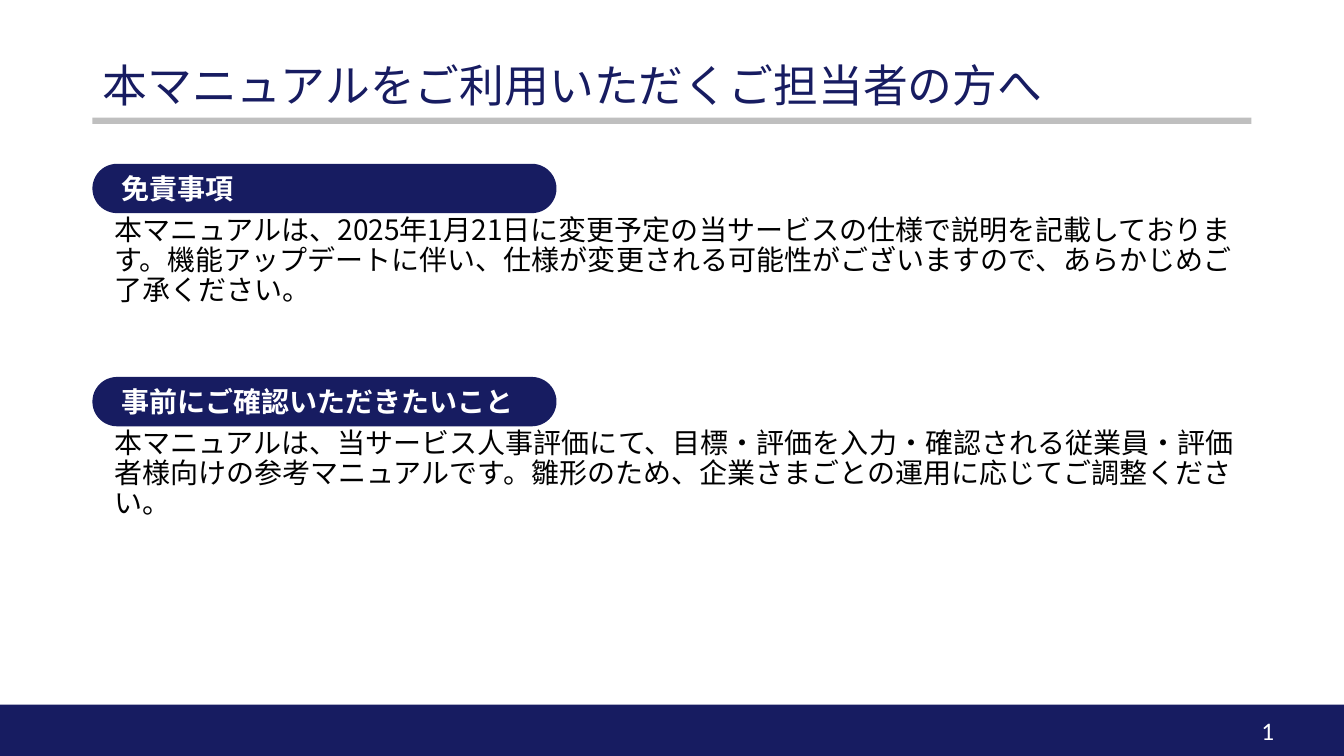
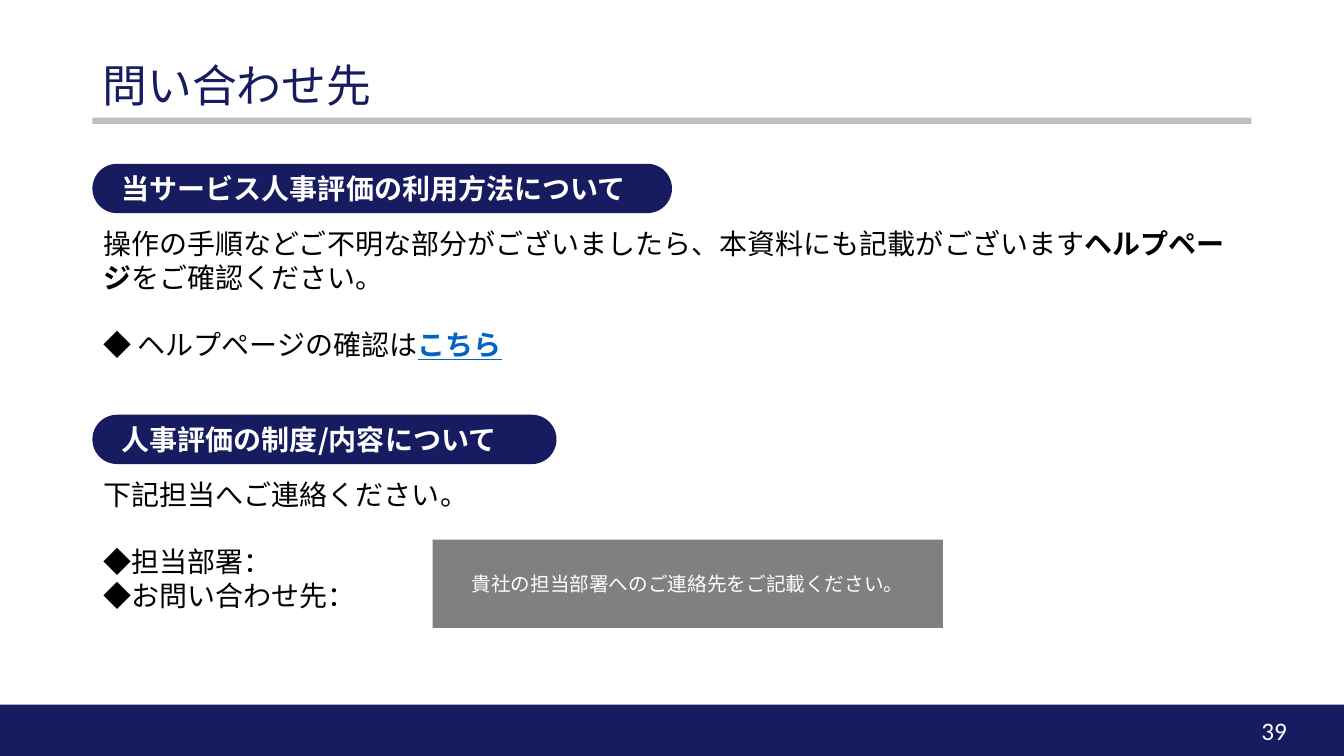
from lxml import etree
from pptx import Presentation
from pptx.dml.color import RGBColor
from pptx.enum.shapes import MSO_SHAPE
from pptx.enum.text import MSO_ANCHOR, MSO_AUTO_SIZE, PP_ALIGN
from pptx.oxml.ns import qn
from pptx.util import Emu, Pt

RECT, PILL = MSO_SHAPE.RECTANGLE, MSO_SHAPE.ROUNDED_RECTANGLE
LEFT, CENTER = PP_ALIGN.LEFT, PP_ALIGN.CENTER
MIDDLE, TOP = MSO_ANCHOR.MIDDLE, MSO_ANCHOR.TOP
NO_FIT = MSO_AUTO_SIZE.NONE

COLORS = {
    "navy": "171C61",
    "rule": "BFBFBF",
    "note": "808080",
    "link": "0563C1",
    "text": "000000",
    "white": "FFFFFF",
}
JP_FONT, NUMBER_FONT = "Noto Sans CJK JP", "Calibri"

# Each paragraph is (gap before in points, [(text, style), ...]).
SLIDES = [
    {
        "title": "本マニュアルをご利用いただくご担当者の方へ",
        "number": "1",
        "body_offset": 45, "body_height": 127, "indent": 11, "line_spacing": 0.9,
        "sections": [
            {"heading": "免責事項", "top": 156, "pill_width": 442, "paragraphs": [
                (0, [("本マニュアルは、2025年1月21日に変更予定の当サービスの仕様で説明を"
                      "記載しております。機能アップデートに伴い、仕様が変更される可能性が"
                      "ございますので、あらかじめご了承ください。", "plain")]),
            ]},
            {"heading": "事前にご確認いただきたいこと", "top": 359, "pill_width": 442, "paragraphs": [
                (0, [("本マニュアルは、当サービス人事評価にて、目標・評価を入力・確認される"
                      "従業員・評価者様向けの参考マニュアルです。雛形のため、企業さまごとの"
                      "運用に応じてご調整ください。", "plain")]),
            ]},
        ],
    },
    {
        "title": "問い合わせ先",
        "number": "39",
        "body_offset": 55, "body_height": 171, "indent": 1, "line_spacing": 1.0,
        "sections": [
            {"heading": "当サービス人事評価の利用方法について", "top": 156, "pill_width": 552, "paragraphs": [
                (0, [("操作の手順などご不明な部分がございましたら、本資料にも記載がございます", "plain"),
                     ("ヘルプページ", "bold"), ("をご確認ください。", "plain")]),
                (24, [("◆ ヘルプページの確認は", "plain"), ("こちら", "link")]),
            ]},
            {"heading": "人事評価の制度/内容について", "top": 395, "pill_width": 442, "paragraphs": [
                (0, [("下記担当へご連絡ください。", "plain")]),
                (24, [("◆担当部署：", "plain")]),
                (0, [("◆お問い合わせ先：", "plain")]),
            ]},
        ],
        "note": "貴社の担当部署へのご連絡先をご記載ください。",
    },
]

SLIDE_W, SLIDE_H = 1280, 720
MARGIN, CONTENT_W = 88, 1104
TITLE_BOX = (MARGIN, 55, CONTENT_W, 58)
RULE_BOX = (MARGIN, 112, CONTENT_W, 6)
FOOTER_BOX = (0, 671, SLIDE_W, SLIDE_H - 671)
NUMBER_BOX = (1192, 677, 68, 38)
NOTE_BOX = (412, 514, 486, 84)
PILL_H, PILL_INSET = 47, 21


def px(value):
    return Emu(value * 9525)


def rgb(name):
    return RGBColor.from_string(COLORS[name])


def place(shape, box):
    shape.left, shape.top, shape.width, shape.height = map(px, box)


def style_paragraph(paragraph, size, color, bold=False, align=LEFT, font=JP_FONT):
    """Set the paragraph font, for East Asian text too, and return its XML."""
    paragraph.alignment = align
    paragraph.font.size = Pt(size)
    paragraph.font.bold = bold
    paragraph.font.color.rgb = rgb(color)
    paragraph.font.name = font
    properties = paragraph._p.get_or_add_pPr()
    defaults = properties.find(qn("a:defRPr"))
    etree.SubElement(defaults, qn("a:ea")).set("typeface", font)
    return properties


def add_block(slide, kind, box, fill):
    block = slide.shapes.add_shape(kind, *map(px, box))
    block.shadow.inherit = False
    block.fill.solid()
    block.fill.fore_color.rgb = rgb(fill)
    block.line.fill.background()
    block.text_frame.vertical_anchor = MIDDLE
    return block


def move_to_layout(layout, block):
    """Make a block part of the layout, behind its placeholders."""
    layout.shapes.element.insert(2, block.element)


def fill_title(title, text):
    frame = title.text_frame
    frame.text = text
    frame.auto_size = NO_FIT
    frame.vertical_anchor = MIDDLE
    frame.paragraphs[0].line_spacing = 0.9
    style_paragraph(frame.paragraphs[0], 32, "navy")


def add_heading(slide, section):
    box = (MARGIN, section["top"], section["pill_width"], PILL_H)
    pill = add_block(slide, PILL, box, "navy")
    pill.adjustments[0] = 0.5
    pill.text_frame.margin_left = px(PILL_INSET)
    pill.text_frame.text = section["heading"]
    style_paragraph(pill.text_frame.paragraphs[0], 20, "white", bold=True)


def fill_body(body, section, content):
    place(body, (MARGIN, section["top"] + content["body_offset"],
                 CONTENT_W, content["body_height"]))
    frame = body.text_frame
    frame.auto_size = NO_FIT
    frame.vertical_anchor = TOP
    for index, (gap, runs) in enumerate(section["paragraphs"]):
        paragraph = frame.add_paragraph() if index else frame.paragraphs[0]
        paragraph.line_spacing = content["line_spacing"]
        paragraph.space_before = Pt(gap)
        properties = style_paragraph(paragraph, 20, "text")
        properties.set("marL", str(px(content["indent"])))
        properties.set("indent", "0")
        no_bullet = etree.Element(qn("a:buNone"))
        properties.find(qn("a:defRPr")).addprevious(no_bullet)
        for text, style in runs:
            run = paragraph.add_run()
            run.text = text
            if style != "plain":
                run.font.bold = True
            if style == "link":
                run.font.underline = True
                run.font.color.rgb = rgb("link")


def add_number(slide, number):
    frame = slide.shapes.add_textbox(*map(px, NUMBER_BOX)).text_frame
    frame.word_wrap = True
    frame.text = number
    style_paragraph(frame.paragraphs[0], 18, "white", font=NUMBER_FONT)


def add_note(slide, text):
    note = add_block(slide, RECT, NOTE_BOX, "note")
    note.text_frame.text = text
    style_paragraph(note.text_frame.paragraphs[0], 14, "white", align=CENTER)


def main():
    deck = Presentation()
    deck.slide_width, deck.slide_height = px(SLIDE_W), px(SLIDE_H)
    layout = deck.slide_layouts.get_by_name("Two Content")
    place(layout.placeholders[0], TITLE_BOX)

    for index, content in enumerate(SLIDES):
        slide = deck.slides.add_slide(layout)
        if index == 0:
            for box, fill in ((RULE_BOX, "rule"), (FOOTER_BOX, "navy")):
                move_to_layout(layout, add_block(slide, RECT, box, fill))
        fill_title(slide.shapes.title, content["title"])
        bodies = list(slide.placeholders)[1:]
        for body, section in zip(bodies, content["sections"]):
            fill_body(body, section, content)
            add_heading(slide, section)
        if "note" in content:
            add_note(slide, content["note"])
        add_number(slide, content["number"])

    deck.save("out.pptx")


if __name__ == "__main__":
    main()
